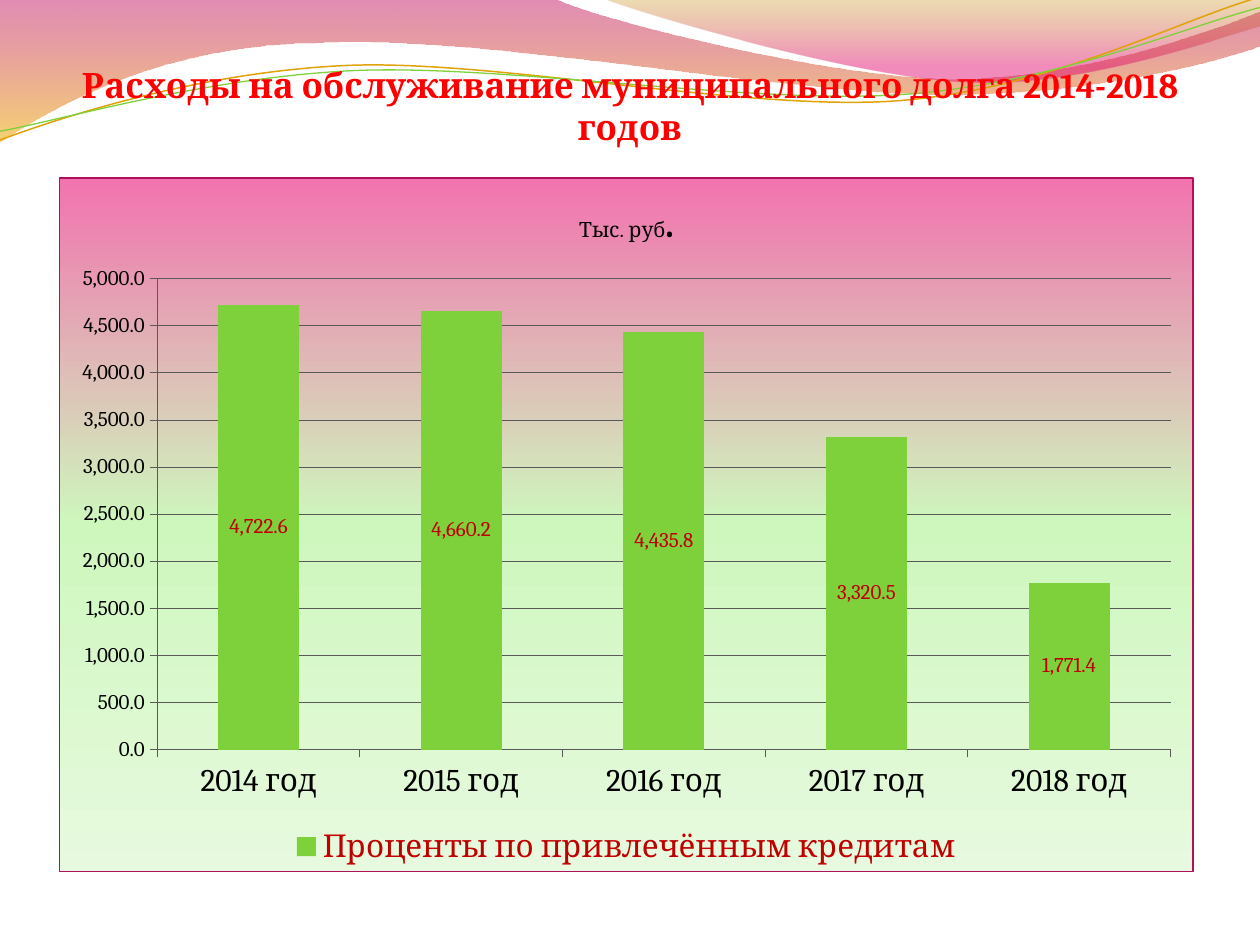
import pptx
import pptx.util
import pptx.oxml
import pptx.oxml.ns
import pptx.dml.color
import pptx.chart.data
import pptx.enum.chart
import pptx.enum.text

Pt = pptx.util.Pt
RGB = pptx.dml.color.RGBColor
Kind = pptx.enum.chart
Text = pptx.enum.text
tag = pptx.oxml.ns.qn
spaces = pptx.oxml.ns.nsdecls

RED = RGB(0xFF, 0, 0)
WINE = RGB(0xC0, 0, 0)
GREEN = RGB(0x7F, 0xD1, 0x3B)
GOLD = RGB(0xE0, 0xA2, 0x09)
PLUM = RGB(0xB0, 0x10, 0x5C)
GREY = RGB(0x59, 0x59, 0x59)
BLACK = RGB(0, 0, 0)
ROSE = RGB(0xBD, 0, 0x59)
AMBER = RGB(0xF0, 0xAB, 0)
OCHRE = RGB(0xC3, 0x8B, 0)
CERISE = RGB(0xE1, 0, 0x6B)
PINK = RGB(0xF2, 0x73, 0xAF)
LIME = RGB(0xCE, 0xF7, 0xBD)
MINT = RGB(0xE7, 0xFA, 0xDF)
NUMBER = "#,##0.0"


def apply(item, values):
    for name, value in values.items():
        setattr(item, name, value)


def blend(stops):
    marks = "".join(
        f'<a:gs pos="{spot * 1000}"><a:srgbClr val="{tint}">'
        + (f'<a:alpha val="{alpha * 1000}"/>' if alpha < 100 else "")
        + '</a:srgbClr></a:gs>' for spot, tint, alpha in stops)
    return (f'<a:gradFill {spaces("a")}><a:gsLst>{marks}</a:gsLst>'
            '<a:lin ang="5400000" scaled="0"/></a:gradFill>')


def bend(shape, parts):
    lines = list(shape._element.iter(tag("a:lnTo")))
    for line, part in zip(lines, parts):
        if len(part) == 6:
            knots = "".join(
                f'<a:pt x="{Pt(x) - shape.left}" y="{Pt(y) - shape.top}"/>'
                for x, y in zip(part[::2], part[1::2]))
            arc = f'<a:cubicBezTo {spaces("a")}>{knots}</a:cubicBezTo>'
            line.getparent().replace(line, pptx.oxml.parse_xml(arc))


class Deck:
    face = "Cambria"

    def __init__(self, show):
        self.slide = show.slides.add_slide(show.slide_layouts[6])

    def style(self, font, size, tint=BLACK, bold=False):
        apply(font, {"name": self.face, "size": Pt(size), "bold": bold})
        font.color.rgb = tint

    def outline(self, start, parts, closed):
        pen = self.slide.shapes.build_freeform(*map(Pt, start), scale=1.0)
        pen.add_line_segments([(Pt(part[-2]), Pt(part[-1])) for part in parts],
                              close=closed)
        shape = pen.convert_to_shape()
        bend(shape, parts)
        shape.shadow.inherit = False
        shape.fill.background()
        return shape

    def wave(self, start, parts, stops):
        shape = self.outline(start, parts, True)
        shape.line.fill.background()
        old = shape._element.spPr.find(tag("a:noFill"))
        old.getparent().replace(old, pptx.oxml.parse_xml(blend(stops)))

    def curve(self, start, parts, tint, width):
        shape = self.outline(start, parts, False)
        shape.line.color.rgb = tint
        shape.line.width = Pt(width)

    def title(self, words, box):
        frame = self.slide.shapes.add_textbox(*map(Pt, box)).text_frame
        apply(frame, {"word_wrap": True, "vertical_anchor": Text.MSO_ANCHOR.BOTTOM,
                      "margin_left": 0, "margin_right": 0,
                      "margin_top": Pt(3.6), "margin_bottom": 0})
        line = frame.paragraphs[0]
        apply(line, {"text": words, "alignment": Text.PP_ALIGN.CENTER})
        self.style(line.runs[0].font, 20, RED, True)

    def chart(self, label, cats, values, heading, box):
        data = pptx.chart.data.CategoryChartData(number_format=NUMBER)
        data.categories = cats
        data.add_series(label, values)
        chart = self.slide.shapes.add_chart(
            Kind.XL_CHART_TYPE.COLUMN_STACKED, *map(Pt, box), data).chart
        self.style(chart.font, 18)
        apply(chart, {"has_legend": True, "has_title": True})
        apply(chart.legend, {"position": Kind.XL_LEGEND_POSITION.BOTTOM,
                             "include_in_layout": False})
        self.style(chart.legend.font, 18, WINE)
        line = chart.chart_title.text_frame.paragraphs[0]
        for words, size, bold in heading:
            run = line.add_run()
            run.text = words
            self.style(run.font, size, BLACK, bold)
        self.axes(chart)
        self.bars(chart.plots[0])
        self.panel(chart)

    def axes(self, chart):
        scale = chart.value_axis
        apply(scale, {"minimum_scale": 0, "maximum_scale": 5000, "major_unit": 500,
                      "has_major_gridlines": True})
        apply(scale.tick_labels, {"number_format": NUMBER,
                                  "number_format_is_linked": False})
        for axis, size in ((scale, 12), (chart.category_axis, 18)):
            axis.major_tick_mark = Kind.XL_TICK_MARK.OUTSIDE
            self.style(axis.tick_labels.font, size)
        for part in (scale, chart.category_axis, scale.major_gridlines):
            part.format.line.color.rgb = GREY
            part.format.line.width = Pt(0.5)

    def bars(self, plot):
        apply(plot, {"gap_width": 150, "overlap": 100,
                     "vary_by_categories": False, "has_data_labels": True})
        apply(plot.data_labels, {"show_value": True, "number_format": NUMBER,
                                 "number_format_is_linked": False,
                                 "position": Kind.XL_LABEL_POSITION.CENTER})
        self.style(plot.data_labels.font, 12, WINE)
        fill = plot.series[0].format.fill
        fill.solid()
        fill.fore_color.rgb = GREEN

    def panel(self, chart):
        fill = blend([(0, PINK, 100), (50, LIME, 100), (100, MINT, 100)])
        area = pptx.oxml.parse_xml(
            f'<c:spPr {spaces("c", "a")}>{fill}'
            f'<a:ln w="{Pt(0.75)}"><a:solidFill><a:srgbClr val="{PLUM}"/>'
            '</a:solidFill></a:ln></c:spPr>')
        chart._chartSpace.find(tag("c:chart")).addnext(area)


def main():
    show = pptx.Presentation()
    apply(show, {"slide_width": Pt(720), "slide_height": Pt(540)})
    deck = Deck(show)
    deck.wave((0, -0.7), [(317, -0.7), (343, 12, 478, 45, 546, 45),
                          (614, 45, 690, 19, 720, 6.5), (720.7, 26),
                          (708, 32, 626, 55, 537, 54), (448, 54, 275, 20, 185, 24.5),
                          (93, 25, 33, 60, -0.7, 81.4), (0, -0.7)],
              [(0, ROSE, 45), (100, AMBER, 55)])
    deck.wave((345, -0.7), [(367, 8, 491, 45, 554, 47),
                            (616, 50, 692, 23, 720, 15), (720, 0), (345, -0.7)],
              [(0, OCHRE, 30), (80, CERISE, 45)])
    deck.curve((0, 80), [(35, 67, 114, 41, 199, 37.4), (284, 34, 427, 64, 513, 57.6),
                         (600, 51, 675, 11, 719, -1.4)], GOLD, 0.85)
    deck.curve((0, 75), [(34, 69, 118, 44, 204, 40.3), (290, 37, 430, 60, 516, 54),
                         (602, 48, 678, 15, 720, 4.3)], GREEN, 0.75)
    deck.title("Расходы на обслуживание муниципального долга 2014-2018 годов",
               (36, 55.4, 648, 28.8))
    deck.chart("Проценты по привлечённым кредитам",
               [f"{year} год" for year in range(2014, 2019)],
               (4722.6, 4660.2, 4435.8, 3320.5, 1771.4),
               (("Тыс. руб", 12, False), (".", 21, True)),
               (33.8, 101.3, 648.4, 397))
    show.save("out.pptx")


if __name__ == "__main__":
    main()
